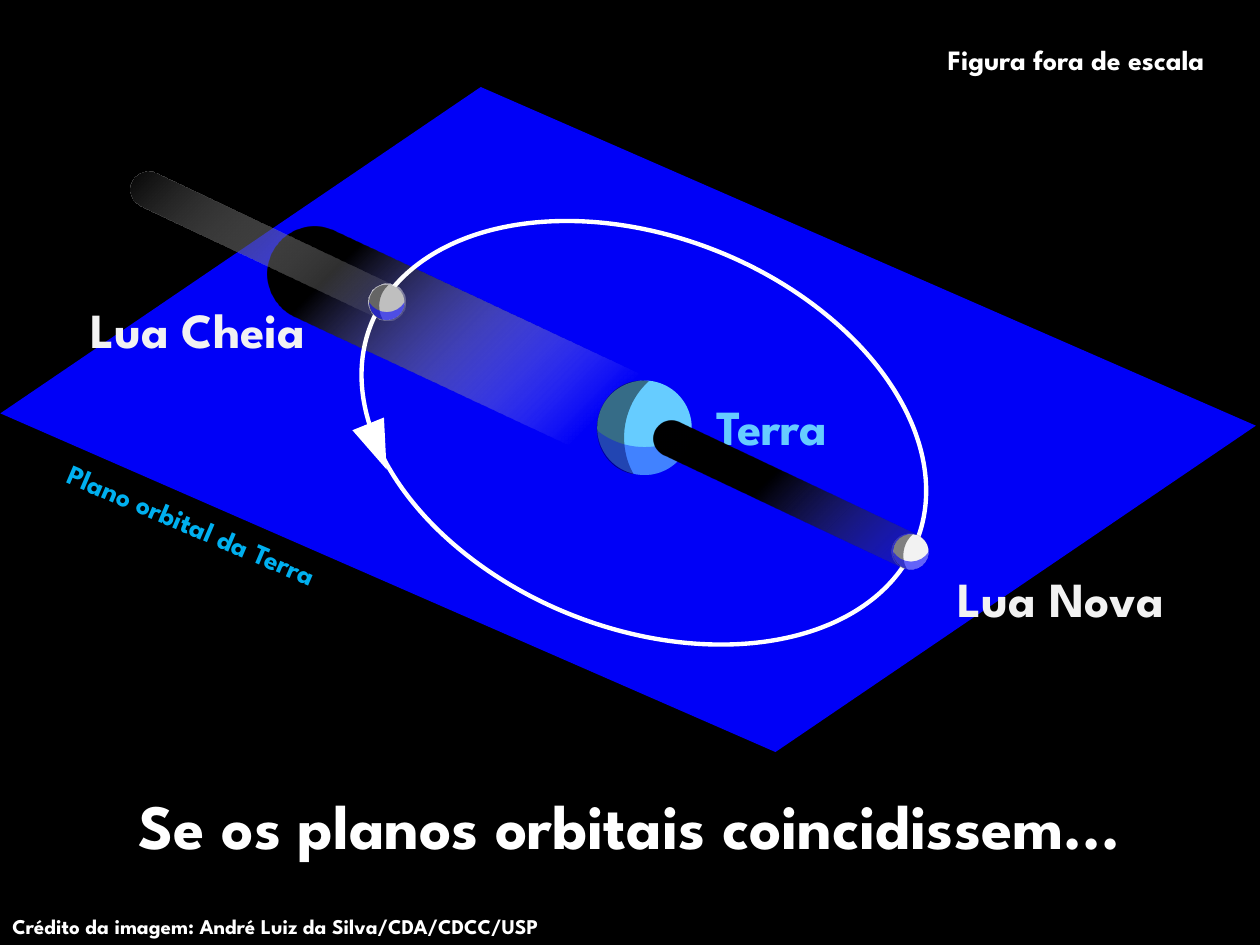
from dataclasses import dataclass
from typing import Any, NamedTuple, Optional

import pptx
import pptx.dml.color
import pptx.enum.shapes
import pptx.enum.text
import pptx.oxml
import pptx.oxml.ns
import pptx.util

SHAPE = pptx.enum.shapes.MSO_SHAPE
ALIGN = pptx.enum.text.PP_ALIGN

WIDTH = pptx.util.Inches(10)
HEIGHT = pptx.util.Inches(7.5)
COLUMN = WIDTH / 10
ROW = HEIGHT / 7.5

FONT = "League Spartan"
WHITE, BLACK, BLUE = "FFFFFF", "000000", "0000FF"
MOONLIGHT, FULL_MOON, EARTH = "F2F2F2", "BFBFBF", "66CCFF"


class Box(NamedTuple):
    """Frame in grid columns and rows, turned clockwise by rotation degrees."""
    left: float
    top: float
    width: float
    height: float
    rotation: float = 0


class Stop(NamedTuple):
    position: int
    color: str
    opacity: int = 100


@dataclass
class Label:
    text: str
    box: Box
    size: int
    color: str = WHITE
    align: Any = ALIGN.CENTER
    wrap: bool = True


@dataclass
class Shadow:
    box: Box
    stops: list[Stop]


@dataclass
class Globe:
    left: float
    top: float
    size: float
    color: str
    submerged: float  # share of the globe below the orbital plane
    moon_curve: float
    plane_opacity: int


EARTH_SHADOW = Shadow(Box(3.43, 0.97, 0.75, 3.63, 115),
                      [Stop(0, FULL_MOON, 0), Stop(25, WHITE, 0), Stop(81, BLACK)])
NEW_MOON_SHADOW = Shadow(Box(6.13, 2.74, 0.29, 2.38, 115.3),
                         [Stop(0, FULL_MOON, 0), Stop(0, "595959", 11), Stop(59, BLACK)])
FULL_MOON_SHADOW = Shadow(Box(1.98, 0.76, 0.29, 2.38, 115.3),
                          [Stop(0, FULL_MOON, 0), Stop(0, WHITE, 0), Stop(100, BLACK)])

TERRA = Globe(4.74, 3.02, 0.75, EARTH, 0.47, 0.63, 36)
LUA_NOVA = Globe(7.09, 4.24, 0.28, MOONLIGHT, 0.5, 0.45, 59)
LUA_CHEIA = Globe(2.93, 2.26, 0.28, FULL_MOON, 0.5, 0.45, 59)

PLANE_LABEL = Label("Plano orbital da Terra", Box(0.26, 3.98, 2.52, 0.37, 23.2),
                    16, "00B0F0", wrap=False)
EARTH_LABELS = [
    Label("Crédito da imagem: André Luiz da Silva/CDA/CDCC/USP",
          Box(0, 7.2, 5.28, 0.3), 12, align=ALIGN.LEFT),
    Label("Terra", Box(5.56, 3.1, 1.13, 0.57), 28, EARTH, wrap=False),
]
FRONT_LABELS = [
    Label("Se os planos orbitais coincidissem...", Box(0, 6.19, 10, 0.71), 36),
    Label("Lua Cheia", Box(0.43, 2.33, 2.28, 0.57), 28, MOONLIGHT),
    Label("Lua Nova", Box(7.28, 4.46, 2.28, 0.57), 28, MOONLIGHT),
    Label("Figura fora de escala", Box(7.28, 0.29, 2.52, 0.37), 16, wrap=False),
]


def rgb(color: str) -> pptx.dml.color.RGBColor:
    return pptx.dml.color.RGBColor.from_string(color)


def frame(box: Box) -> list[int]:
    return [round(box.left * COLUMN), round(box.top * ROW),
            round(box.width * COLUMN), round(box.height * ROW)]


def add_figure(shapes: Any, kind: Any, box: Box, color: Optional[str] = None,
               opacity: int = 100, curve: Optional[float] = None) -> Any:
    """Draw an outline-free preset shape; without a color it stays unfilled."""
    figure = shapes.add_shape(kind, *frame(box))
    figure.rotation = box.rotation
    figure.shadow.inherit = False
    figure.line.fill.background()
    if curve is not None:
        figure.adjustments[0] = curve
    if color is None:
        figure.fill.background()
        return figure
    figure.fill.solid()
    figure.fill.fore_color.rgb = rgb(color)
    if opacity < 100:
        fill_color = figure.element.spPr.find(".//" + pptx.oxml.ns.qn("a:srgbClr"))
        fill_color.append(pptx.oxml.parse_xml(
            f'<a:alpha {pptx.oxml.ns.nsdecls("a")} val="{opacity * 1000}"/>'))
    return figure


def add_shadow(shapes: Any, shadow: Shadow) -> None:
    """Draw a rounded cylinder that fades from its lower right end."""
    cylinder = add_figure(shapes, SHAPE.CAN, shadow.box, curve=1.0)
    stops = "".join(
        f'<a:gs pos="{stop.position * 1000}"><a:srgbClr val="{stop.color}">'
        f'<a:alpha val="{stop.opacity * 1000}"/></a:srgbClr></a:gs>'
        for stop in shadow.stops)
    gradient = pptx.oxml.parse_xml(
        f'<a:gradFill {pptx.oxml.ns.nsdecls("a")} rotWithShape="1">'
        f'<a:gsLst>{stops}</a:gsLst><a:path path="circle">'
        '<a:fillToRect l="100000" t="100000"/></a:path></a:gradFill>')
    properties = cylinder.element.spPr
    properties.replace(properties.find(pptx.oxml.ns.qn("a:noFill")), gradient)


def add_globe(shapes: Any, globe: Globe) -> None:
    """Draw a sphere with its night side and the part below the plane."""
    parts = shapes.add_group_shape().shapes
    size = globe.size
    depth = globe.submerged * size
    night = Box(globe.left, globe.top - 0.04 * size, 0.47 * size, size, 9.4)
    below = Box(globe.left + (size - depth) / 2, globe.top + (size - depth) / 2,
                depth, size, 270)
    add_figure(parts, SHAPE.OVAL, Box(globe.left, globe.top, size, size, 351.5), globe.color)
    add_figure(parts, SHAPE.MOON, night, BLACK, 47, 0.63)
    add_figure(parts, SHAPE.MOON, below, BLUE, globe.plane_opacity, globe.moon_curve)


def add_label(shapes: Any, label: Label) -> None:
    box = shapes.add_textbox(*frame(label.box))
    box.rotation = label.box.rotation
    box.text_frame.word_wrap = label.wrap
    paragraph = box.text_frame.paragraphs[0]
    paragraph.alignment = label.align
    run = paragraph.add_run()
    run.text = label.text
    run.font.color.rgb = rgb(label.color)
    style = {"name": FONT, "size": pptx.util.Pt(label.size), "bold": True}
    for attribute, value in style.items():
        setattr(run.font, attribute, value)


def add_orbit(shapes: Any) -> None:
    orbit = add_figure(shapes, SHAPE.OVAL, Box(2.78, 1.88, 4.66, 3.11, 21.6))
    orbit.line.color.rgb = rgb(WHITE)
    orbit.line.width = pptx.util.Pt(2.5)


def main() -> None:
    deck = pptx.Presentation()
    deck.slide_width, deck.slide_height = WIDTH, HEIGHT
    slide = deck.slides.add_slide(deck.slide_layouts[6])
    slide.background.fill.solid()
    slide.background.fill.fore_color.rgb = rgb(BLACK)
    shapes = slide.shapes

    add_label(shapes, PLANE_LABEL)
    add_figure(shapes, SHAPE.PARALLELOGRAM, Box(0.4, 1.38, 9.17, 3.9, 23.6), BLUE, 97, 0.63)
    add_shadow(shapes, EARTH_SHADOW)
    add_globe(shapes, TERRA)
    for label in EARTH_LABELS:
        add_label(shapes, label)
    add_orbit(shapes)
    add_shadow(shapes, NEW_MOON_SHADOW)
    add_globe(shapes, LUA_NOVA)
    add_shadow(shapes, FULL_MOON_SHADOW)
    add_globe(shapes, LUA_CHEIA)
    add_figure(shapes, SHAPE.ISOSCELES_TRIANGLE, Box(2.86, 3.35, 0.27, 0.39, 158), WHITE)
    for label in FRONT_LABELS:
        add_label(shapes, label)

    deck.save("out.pptx")


if __name__ == "__main__":
    main()
